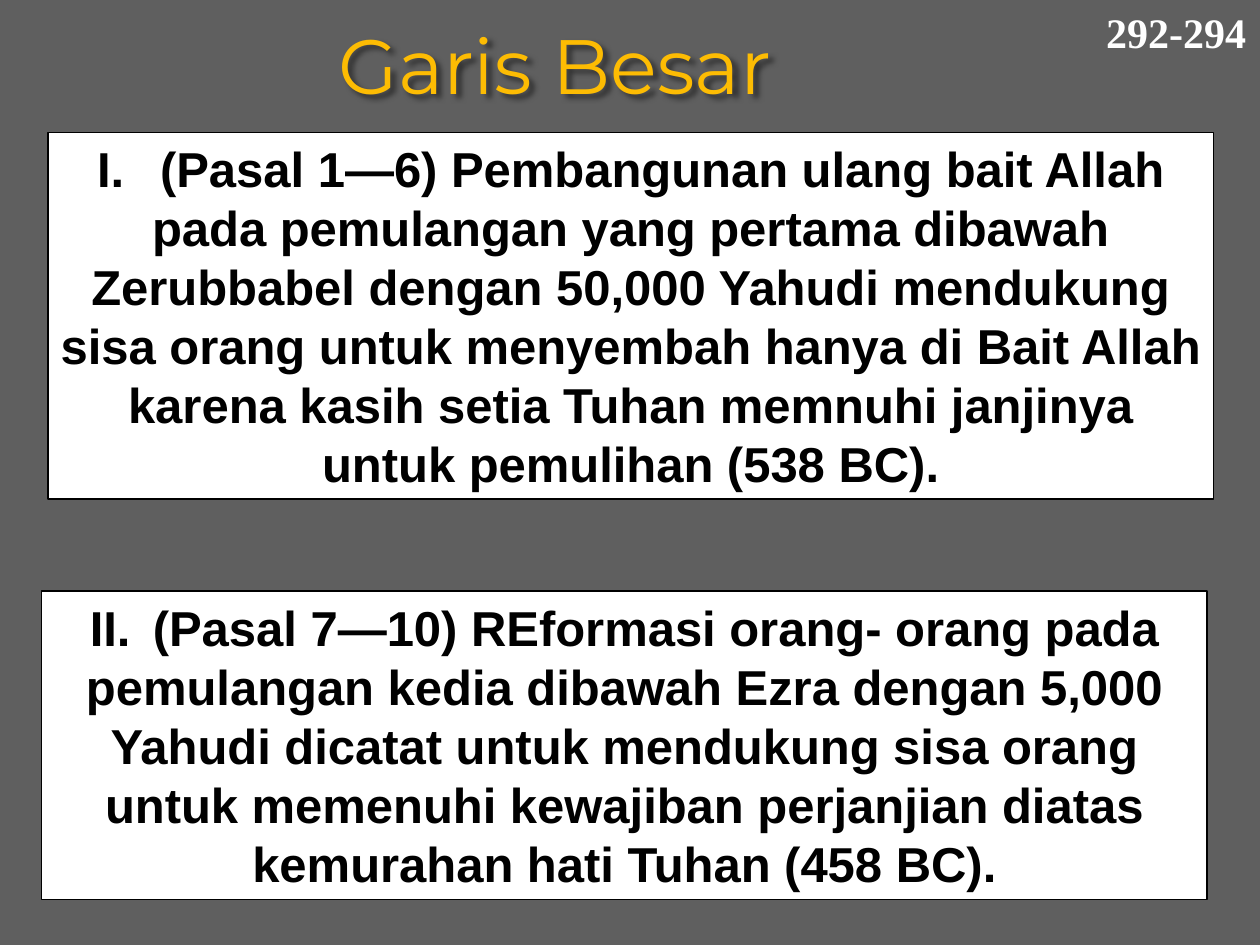
from lxml import etree
from pptx import Presentation
from pptx.dml.color import RGBColor
from pptx.enum import shapes, text
from pptx.oxml.ns import qn
from pptx.util import Inches, Pt

POINTS = [
    (0.38, 1.05, 2.91,
     "I.\t(Pasal 1—6) Pembangunan ulang bait Allah pada pemulangan yang pertama "
     "dibawah Zerubbabel dengan 50,000 Yahudi mendukung sisa orang untuk menyembah "
     "hanya di Bait Allah karena kasih setia Tuhan memnuhi janjinya untuk "
     "pemulihan (538 BC)."),
    (0.33, 4.69, 2.45,
     "II.\t(Pasal 7—10) REformasi orang- orang pada pemulangan kedia dibawah Ezra "
     "dengan 5,000 Yahudi dicatat untuk mendukung sisa orang untuk memenuhi "
     "kewajiban perjanjian diatas kemurahan hati Tuhan (458 BC)."),
]


def color(code):
    return RGBColor.from_string(code)


def write(frame, words, size, font, ink, bold=False, pitch=None,
          anchor=text.MSO_ANCHOR.TOP):
    frame.word_wrap = True
    frame.vertical_anchor = anchor
    para = frame.paragraphs[0]
    para.alignment = text.PP_ALIGN.CENTER
    if pitch:
        para.line_spacing = Pt(pitch)
    run = para.add_run()
    run.text = words
    run.font.size = Pt(size)
    run.font.name = font
    run.font.bold = bold
    run.font.color.rgb = color(ink)


def shade(shape):
    """Give the shape a soft shadow to the lower right."""
    effects = etree.SubElement(shape._element.spPr, qn("a:effectLst"))
    outer = etree.SubElement(effects, qn("a:outerShdw"), blurRad="38100",
                             dist="38100", dir="2700000", algn="tl")
    tone = etree.SubElement(outer, qn("a:srgbClr"), val="000000")
    etree.SubElement(tone, qn("a:alpha"), val="50000")


class Page:
    """The current slide and the style of its elements."""
    back, gold, white, black = "5F5F5F", "FDBC03", "FFFFFF", "000000"

    def __init__(self, deck):
        self.slide = deck.slides.add_slide(deck.slide_layouts[5])
        fill = self.slide.background.fill
        fill.solid()
        fill.fore_color.rgb = color(self.back)

    def title(self, words, left, top, width, height):
        head = self.slide.shapes.title
        head.left, head.top = Inches(left), Inches(top)
        head.width, head.height = Inches(width), Inches(height)
        head.text_frame.auto_size = text.MSO_AUTO_SIZE.NONE
        write(head.text_frame, words, 44, "Montserrat", self.gold,
              anchor=text.MSO_ANCHOR.BOTTOM)
        shade(head)

    def label(self, words, left, top, width, height):
        box = self.slide.shapes.add_textbox(
            Inches(left), Inches(top), Inches(width), Inches(height))
        write(box.text_frame, words, 24, "Times New Roman", self.white, bold=True)

    def panel(self, words, left, top, width, height):
        box = self.slide.shapes.add_shape(
            shapes.MSO_SHAPE.RECTANGLE,
            Inches(left), Inches(top), Inches(width), Inches(height))
        box.shadow.inherit = False
        box.fill.solid()
        box.fill.fore_color.rgb = color(self.white)
        box.line.color.rgb = color(self.black)
        box.line.width = Pt(0.75)
        box.text_frame.auto_size = text.MSO_AUTO_SIZE.SHAPE_TO_FIT_TEXT
        write(box.text_frame, words, 28, "Arial", self.black, bold=True, pitch=33.7)


def main():
    deck = Presentation()
    deck.slide_width, deck.slide_height = Inches(10), Inches(7.5)
    page = Page(deck)
    page.title("Garis Besar", 1.92, 0.17, 4.97, 0.75)
    page.label("292-294", 8.67, 0, 1.33, 0.5)
    for left, top, height, words in POINTS:
        page.panel(words, left, top, 9.25, height)
    deck.save("out.pptx")


if __name__ == "__main__":
    main()
